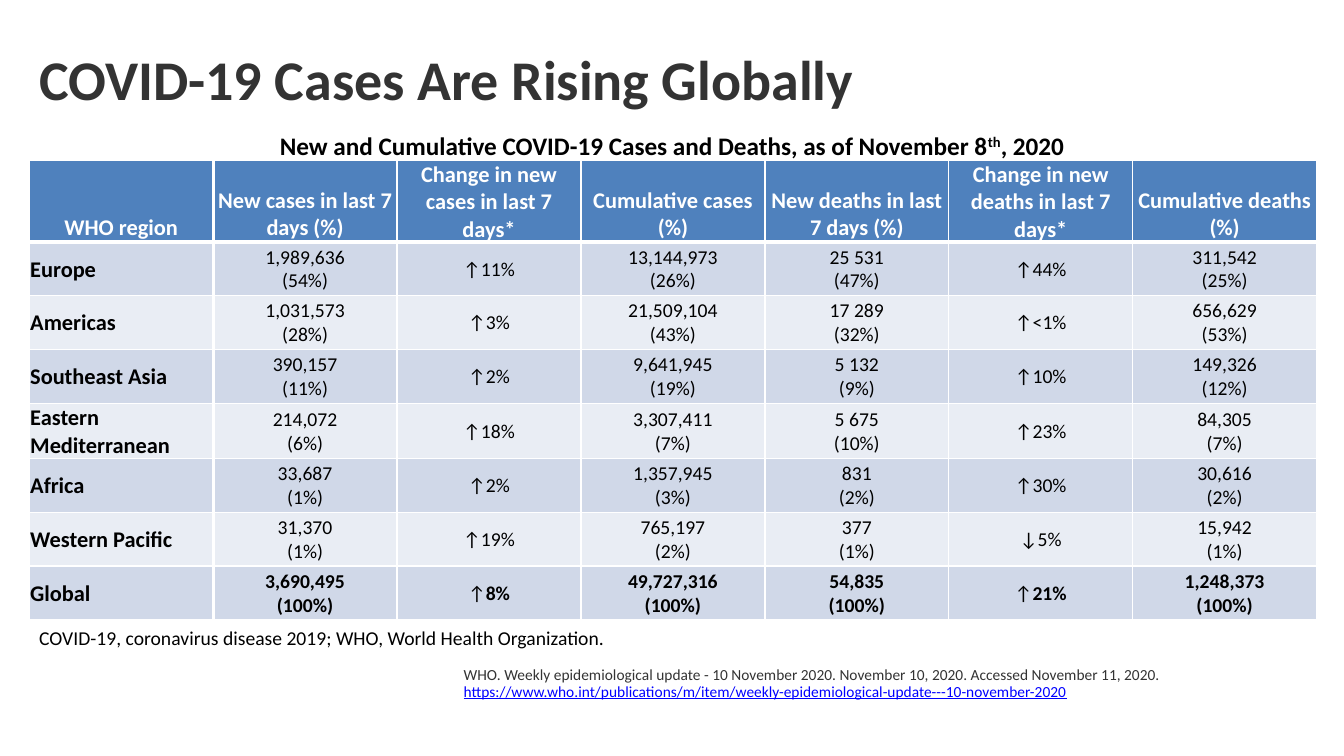
"""Build a slide with a table of COVID-19 cases and deaths by WHO region."""
import copy

import lxml.etree
import pptx
import pptx.dml.color
import pptx.enum.text
import pptx.oxml.ns
import pptx.util

WIDTH, HEIGHT = 13.33, 7.5
FONT = "Calibri"
BLACK, WHITE, GREY, BLUE = "000000", "FFFFFF", "333333", "0000FF"
HEADER_FILL, BANDS = "4F81BD", ("D0D8E8", "E9EDF4")

TITLE = "COVID-19 Cases Are Rising Globally"
CAPTION = ("New and Cumulative COVID-19 Cases and Deaths, as of November 8", "th", ", 2020")
FOOTNOTE = "COVID-19, coronavirus disease 2019; WHO, World Health Organization."
REFERENCE = (
    "WHO. Weekly epidemiological update - 10 November 2020. November 10, 2020. Accessed November 11, 2020. ",
    "https://www.who.int/publications/m/item/weekly-epidemiological-update---10-november-2020",
)
HEADERS = (
    "WHO region", "New cases in last 7 days (%)", "Change in new cases in last 7 days*",
    "Cumulative cases (%)", "New deaths in last 7 days (%)",
    "Change in new deaths in last 7 days*", "Cumulative deaths (%)",
)
REGIONS = (
    ("Europe", "1,989,636\n(54%)", "↑11%", "13,144,973\n(26%)", "25 531\n(47%)", "↑44%", "311,542\n(25%)"),
    ("Americas", "1,031,573\n(28%)", "↑3%", "21,509,104\n(43%)", "17 289\n(32%)", "↑<1%", "656,629\n(53%)"),
    ("Southeast Asia", "390,157\n(11%)", "↑2%", "9,641,945\n(19%)", "5 132\n(9%)", "↑10%", "149,326\n(12%)"),
    ("Eastern Mediterranean", "214,072\n(6%)", "↑18%", "3,307,411\n(7%)", "5 675\n(10%)", "↑23%", "84,305\n(7%)"),
    ("Africa", "33,687\n(1%)", "↑2%", "1,357,945\n(3%)", "831\n(2%)", "↑30%", "30,616\n(2%)"),
    ("Western Pacific", "31,370\n(1%)", "↑19%", "765,197\n(2%)", "377\n(1%)", "↓5%", "15,942\n(1%)"),
    ("Global", "3,690,495\n(100%)", "↑8%", "49,727,316\n(100%)", "54,835\n(100%)", "↑21%", "1,248,373\n(100%)"),
)
LEFT, TABLE_TOP, TABLE_WIDTH, TABLE_HEIGHT, HEADER_HEIGHT = 0.29, 1.59, 12.77, 4.48, 0.74
THICK_EDGES = (1, 4)

Inches, Pt = pptx.util.Inches, pptx.util.Pt
ALIGN, ANCHOR = pptx.enum.text.PP_ALIGN, pptx.enum.text.MSO_ANCHOR
qn = pptx.oxml.ns.qn


def paint(target, color):
    target.rgb = pptx.dml.color.RGBColor.from_string(color)


def style(span, size, color, bold=False):
    span.font.name, span.font.size, span.font.bold = FONT, Pt(size), bold
    paint(span.font.color, color)


def add_text(page, place, parts, size, color, bold=False, spacing=0.9):
    box = page.shapes.add_textbox(*map(Inches, place))
    box.text_frame.word_wrap = True
    para = box.text_frame.paragraphs[0]
    para.line_spacing = spacing
    for part in parts:
        span = para.add_run()
        span.text = part
        style(span, size, color, bold)
    return box


def add_borders(cell, widths):
    for side, width in zip("LRTB", widths):
        line = lxml.etree.SubElement(cell._tc.get_or_add_tcPr(), qn("a:ln" + side), w=str(Pt(width)))
        fill = lxml.etree.SubElement(line, qn("a:solidFill"))
        lxml.etree.SubElement(fill, qn("a:srgbClr"), val=WHITE)


def fill_cell(cell, text, row, column):
    header, name, total = row == 0, column == 0, row == len(REGIONS)
    left = 2.25 if column in THICK_EDGES else 1
    right = 2.25 if column + 1 in THICK_EDGES else 1
    add_borders(cell, (left, right, 3 if row == 1 else 1, 3 if header else 1))
    cell.fill.solid()
    paint(cell.fill.fore_color, HEADER_FILL if header else BANDS[(row - 1) % 2])
    cell.margin_left = cell.margin_right = cell.margin_top = Inches(0.01)
    cell.margin_bottom = 0
    cell.vertical_anchor = ANCHOR.BOTTOM if header else ANCHOR.MIDDLE
    para = cell.text_frame.paragraphs[0]
    para.alignment = ALIGN.LEFT if name and not header else ALIGN.CENTER
    split_arrow = total and text.startswith("↑")
    para.text = text[:1] if split_arrow else text
    if split_arrow:
        para.add_run().text = text[1:]
    for span in para.runs:
        bold = header or name or (total and span.text != "↑")
        style(span, 16 if header or name else 14, WHITE if header else BLACK, bold)
    for line_break in para._p.findall(qn("a:br")):
        line_break.append(copy.deepcopy(para.runs[0]._r.rPr))


def add_region_table(page):
    rows = (HEADERS, *REGIONS)
    place = map(Inches, (LEFT, TABLE_TOP, TABLE_WIDTH, TABLE_HEIGHT))
    table = page.shapes.add_table(len(rows), len(HEADERS), *place).table
    for column in table.columns:
        column.width = Inches(TABLE_WIDTH / len(HEADERS))
    for row, texts in enumerate(rows):
        body_height = (TABLE_HEIGHT - HEADER_HEIGHT) / len(REGIONS)
        table.rows[row].height = Inches(body_height if row else HEADER_HEIGHT)
        for column, text in enumerate(texts):
            fill_cell(table.cell(row, column), text, row, column)


def main():
    deck = pptx.Presentation()
    deck.slide_width, deck.slide_height = Inches(WIDTH), Inches(HEIGHT)
    page = deck.slides.add_slide(deck.slide_layouts[6])

    title = add_text(page, (LEFT, 0.19, 12.78, 1.25), [TITLE], 40, GREY, True)
    title.text_frame.vertical_anchor = ANCHOR.MIDDLE
    add_region_table(page)

    reference = add_text(page, (4.5, 6.57, 8.83, 0.8), REFERENCE, 11, GREY)
    address = reference.text_frame.paragraphs[0].runs[1]
    address.font.underline = True
    paint(address.font.color, BLUE)
    add_text(page, (LEFT, 6.19, 12.78, 0.3), [FOOTNOTE], 14, BLACK)

    caption = add_text(page, (2.63, 1.24, 8.07, 0.4), CAPTION, 18, BLACK, True, 1.0)
    caption.text_frame.word_wrap = False
    para = caption.text_frame.paragraphs[0]
    para.alignment = ALIGN.CENTER
    para.runs[1].font._element.set("baseline", "30000")
    deck.save("out.pptx")


if __name__ == "__main__":
    main()
